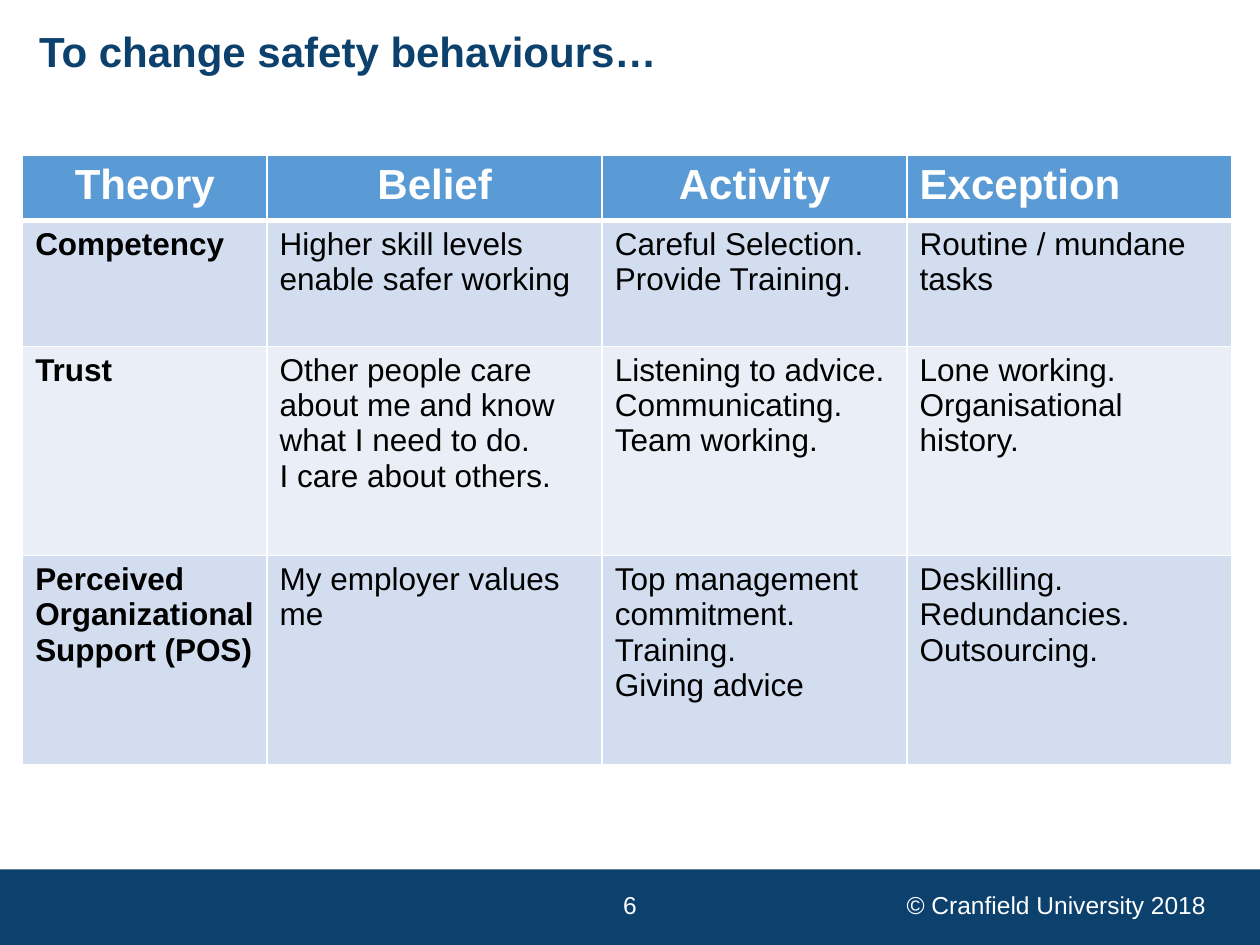
import pptx
import pptx.util
import pptx.dml.color
import pptx.enum.shapes
import pptx.enum.text
import pptx.oxml
import pptx.oxml.ns

Inches, Pt = pptx.util.Inches, pptx.util.Pt
RGB = pptx.dml.color.RGBColor
ALIGN = pptx.enum.text.PP_ALIGN
ANCHOR = pptx.enum.text.MSO_ANCHOR

NAVY = RGB(0x0C, 0x40, 0x6D)
BLUE = RGB(0x5B, 0x9B, 0xD5)
BANDS = [RGB(0xD2, 0xDE, 0xEF), RGB(0xEA, 0xEF, 0xF7)]
WHITE = RGB(255, 255, 255)
BLACK = RGB(0, 0, 0)


def write(frame, text, size, color, bold=False, align=ALIGN.LEFT):
    """Fill a text frame, one paragraph per line of text."""
    frame.text = text
    style = {"name": "Arial", "size": Pt(size), "bold": bold}
    for para in frame.paragraphs:
        para.alignment = align
        for run in para.runs:
            for key, value in style.items():
                setattr(run.font, key, value)
            run.font.color.rgb = color


def edge(cell, side, width):
    """Draw a white border on one side of a table cell."""
    line = pptx.oxml.parse_xml(
        f'<a:{side} {pptx.oxml.ns.nsdecls("a")} w="{Pt(width)}"><a:solidFill>'
        f'<a:srgbClr val="{WHITE}"/></a:solidFill></a:{side}>')
    cell._tc.get_or_add_tcPr().append(line)


deck = pptx.Presentation()
deck.slide_width, deck.slide_height = Inches(10), Inches(7.5)
slide = deck.slides.add_slide(deck.slide_layouts[5])
shapes = slide.shapes

# Title
title = shapes.title
title.left, title.top = Inches(0.21), Inches(0.2)
title.width, title.height = Inches(7.4), Inches(1.25)
frame = title.text_frame
write(frame, "To change safety behaviours…", 24, NAVY, True)
frame.auto_size = pptx.enum.text.MSO_AUTO_SIZE.NONE
frame.vertical_anchor = ANCHOR.TOP
frame.paragraphs[0].line_spacing = 0.9

# Footer
bar = shapes.add_shape(pptx.enum.shapes.MSO_SHAPE.RECTANGLE,
                       0, Inches(6.9), Inches(10), Inches(0.6))
bar.shadow.inherit = False
bar.fill.solid()
bar.fill.fore_color.rgb = NAVY
bar.line.fill.background()

for text, left, width, align in [
    ("© Cranfield University 2018", 6.97, 2.7, ALIGN.RIGHT),
    ("6", 3.31, 3.38, ALIGN.CENTER),
]:
    box = shapes.add_textbox(Inches(left), Inches(7.01), Inches(width), Inches(0.34))
    box.text_frame.word_wrap = True
    box.text_frame.vertical_anchor = ANCHOR.MIDDLE
    write(box.text_frame, text, 14, WHITE, align=align)

# Table
rows = [
    ["Theory", "Belief", "Activity", "Exception"],
    ["Competency",
     "Higher skill levels enable safer working",
     "Careful Selection.\nProvide Training.",
     "Routine / mundane tasks"],
    ["Trust",
     "Other people care about me and know what I need to do.\nI care about others.",
     "Listening to advice.\nCommunicating.\nTeam working.",
     "Lone working.\nOrganisational history."],
    ["Perceived\nOrganizational\nSupport (POS)",
     "My employer values me",
     "Top management commitment.\nTraining.\nGiving advice",
     "Deskilling.\nRedundancies.\nOutsourcing."],
]
widths = [1.94, 2.66, 2.42, 2.58]
heights = [0.52, 1, 1.66, 1.66]
table = shapes.add_table(len(rows), len(widths), Inches(0.18), Inches(1.23),
                         Inches(sum(widths)), Inches(sum(heights))).table
for col, width in zip(table.columns, widths):
    col.width = Inches(width)
for row, height in zip(table.rows, heights):
    row.height = Inches(height)

for r, row in enumerate(rows):
    for c, text in enumerate(row):
        cell = table.cell(r, c)
        for side in ("lnL", "lnR", "lnT", "lnB"):
            thick = (r, side) in [(0, "lnB"), (1, "lnT")]
            edge(cell, side, 3 if thick else 1)
        cell.fill.solid()
        if r == 0:
            cell.fill.fore_color.rgb = BLUE
            align = ALIGN.CENTER if c < 3 else ALIGN.LEFT
            write(cell.text_frame, text, 24, WHITE, True, align)
        else:
            cell.fill.fore_color.rgb = BANDS[(r - 1) % 2]
            write(cell.text_frame, text, 18, BLACK, c == 0)

deck.save("out.pptx")
